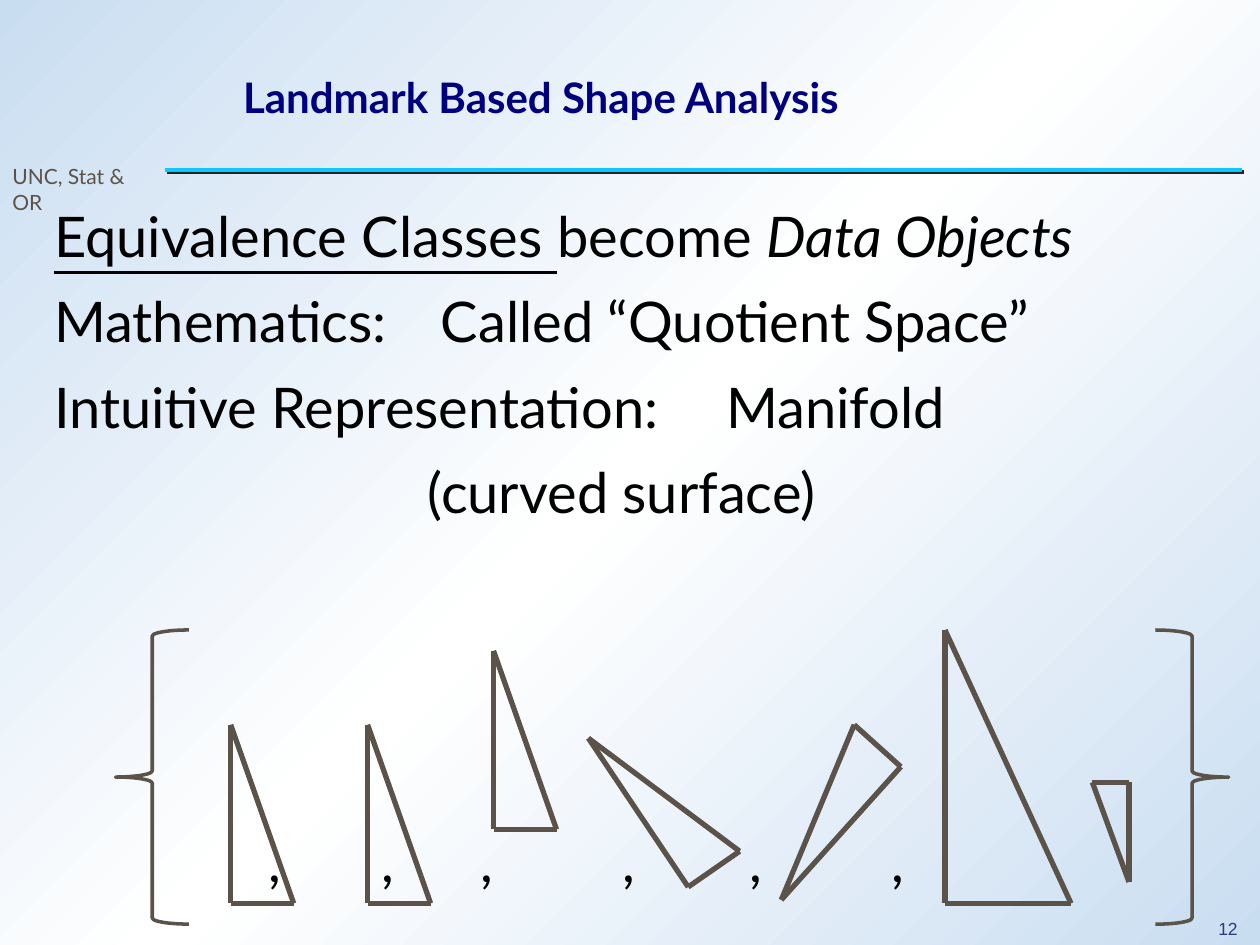
from copy import deepcopy

from lxml import etree
from pptx import Presentation
from pptx import util as u
from pptx.dml.color import RGBColor
from pptx.enum import shapes, text
from pptx.oxml import ns

PALE_BLUE = RGBColor(0xC9, 0xDD, 0xF1)
WHITE = RGBColor(0xFF, 0xFF, 0xFF)
CYAN = RGBColor(0x0F, 0xC7, 0xFF)
SHADOW = RGBColor(0x23, 0x23, 0x23)
NAVY = RGBColor(0x00, 0x00, 0x7F)
PAGE_BLUE = RGBColor(0x2A, 0x3D, 0x7A)
BROWN = RGBColor(0x5B, 0x52, 0x49)
BLACK = RGBColor(0, 0, 0)

UPRIGHT = ((0, 0), (0, 1), (1, 1))
TRIANGLES = (
    ((4.65, 14.61, 1.27, 3.6), UPRIGHT),
    ((7.41, 14.61, 1.27, 3.6), UPRIGHT),
    ((9.95, 13.12, 1.27, 3.6), UPRIGHT),
    ((11.86, 14.88, 3.05, 3), ((0, 0), (0.66, 1), (1, 0.76))),
    ((15.75, 14.61, 2.41, 3.53), ((0, 1), (1, 0.24), (0.61, 0))),
    ((19.05, 12.7, 2.54, 5.51), UPRIGHT),
    ((22.02, 15.77, 0.74, 2.01), ((1, 1), (1, 0), (0, 0))),
)
COMMA_STOPS = (4.32, 6.6, 8.59, 11.46, 14.02, 16.89)


def add_background(slide):
    fill = slide.background.fill
    fill.gradient()
    fill.gradient_angle = 315
    first, last = fill.gradient_stops
    first.color.rgb = last.color.rgb = PALE_BLUE
    first.position, last.position = 0, 1
    stop_list = slide.background._cSld.find(".//" + ns.qn("a:gsLst"))
    stop_list.insert(1, deepcopy(stop_list[0]))
    middle = fill.gradient_stops[1]
    middle.position = 0.5
    middle.color.rgb = WHITE


def add_line(parent, start, end, color, width):
    line = parent.add_connector(
        shapes.MSO_CONNECTOR.STRAIGHT, *(u.Cm(value) for value in (*start, *end)))
    line.line.color.rgb = color
    line.line.width = u.Pt(width)
    return etree.SubElement(line._element.spPr, ns.qn("a:effectLst"))


def add_text_box(slide, left, top, width, height):
    box = slide.shapes.add_textbox(u.Cm(left), u.Cm(top), u.Cm(width), u.Cm(height))
    box.text_frame.word_wrap = True
    return box.text_frame


def format_runs(paragraph, size, color, name="Lato", bold=False):
    for run in paragraph.runs:
        run.font.size = u.Pt(size)
        run.font.name = name
        run.font.bold = bold
        run.font.color.rgb = color


def format_body(paragraph, stops=()):
    paragraph.line_spacing = 1.1
    paragraph.space_before = u.Pt(6.4)
    format_runs(paragraph, 32, BLACK)
    if stops:
        tab_list = etree.SubElement(paragraph._p.get_or_add_pPr(), ns.qn("a:tabLst"))
        for stop in stops:
            etree.SubElement(tab_list, ns.qn("a:tab"), pos=str(u.Cm(stop)), algn="l")


def add_header(slide, left, top, width):
    title = add_text_box(slide, left + 4.65, top, width - 5.54, 1.37)
    title.vertical_anchor = text.MSO_ANCHOR.MIDDLE
    title.text = "Landmark Based Shape Analysis"
    format_runs(title.paragraphs[0], 24, NAVY, bold=True)

    effects = add_line(slide.shapes, (left + 3.33, top + 2.16),
                       (left + width - 0.36, top + 2.16), CYAN, 2.25)
    shadow = etree.SubElement(effects, ns.qn("a:outerShdw"), blurRad="0",
                              dist=str(u.Pt(1.4)), dir="2700000")
    etree.SubElement(shadow, ns.qn("a:srgbClr"), val=str(SHADOW))

    department = add_text_box(slide, left, top + 1.91, 3.43, 0.76)
    department.text = "UNC, Stat & OR"
    format_runs(department.paragraphs[0], 12, BROWN)


def add_page_number(slide, left, top, width, height):
    frame = add_text_box(slide, left, top, width, height)
    frame.word_wrap = False
    frame.text = "12"
    frame.paragraphs[0].line_spacing = 0.9
    format_runs(frame.paragraphs[0], 10, PAGE_BLUE, "Arial")


def add_body(slide, left, top, width, height):
    frame = add_text_box(slide, left, top, width, height)
    opening = frame.paragraphs[0]
    for words in ("Equivalence Classes ", "become ", "Data Objects"):
        opening.add_run().text = words
    format_body(opening)
    opening.runs[0].font.underline = True
    opening.runs[2].font.italic = True

    for words, stops in (("Mathematics:\tCalled “Quotient Space”", (7.8,)),
                         ("Intuitive Representation:\tManifold", (13.55,)),
                         ("(curved surface)", ())):
        paragraph = frame.add_paragraph()
        paragraph.text = words
        format_body(paragraph, stops)
    frame.paragraphs[-1].alignment = text.PP_ALIGN.CENTER


def add_commas(slide, left, top, width, height):
    frame = add_text_box(slide, left, top, width, height)
    frame.text = "\t," * len(COMMA_STOPS)
    format_body(frame.paragraphs[0], COMMA_STOPS)


def add_triangle(slide, left, top, width, height, corners):
    group = slide.shapes.add_group_shape()
    points = [(left + x * width, top + y * height) for x, y in corners]
    for start, end in zip(points, points[1:] + points[:1]):
        add_line(group.shapes, start, end, BROWN, 3)


def add_braces(slide, left, top, width, height):
    brace_width = 1.48
    for x, rotation in ((left, 0), (left + width - brace_width, 180)):
        brace = slide.shapes.add_shape(shapes.MSO_SHAPE.LEFT_BRACE, u.Cm(x), u.Cm(top),
                                       u.Cm(brace_width), u.Cm(height))
        brace.rotation = rotation
        brace.shadow.inherit = False
        brace.fill.background()
        brace.line.color.rgb = BROWN
        brace.line.width = u.Pt(2)


def main():
    presentation = Presentation()
    presentation.slide_width = u.Cm(25.4)
    presentation.slide_height = u.Cm(19.05)
    slide = presentation.slides.add_slide(presentation.slide_layouts[6])
    add_background(slide)
    add_header(slide, 0, 1.27, 25.4)
    add_page_number(slide, 24.31, 18.42, 0.94, 0.64)
    add_body(slide, 0.84, 3.81, 23.39, 7.2)
    add_commas(slide, 0.84, 16.41, 23.39, 1.8)
    for box, corners in TRIANGLES:
        add_triangle(slide, *box, corners)
    add_braces(slide, 2.33, 12.7, 22.44, 5.93)
    presentation.save("out.pptx")


if __name__ == "__main__":
    main()
